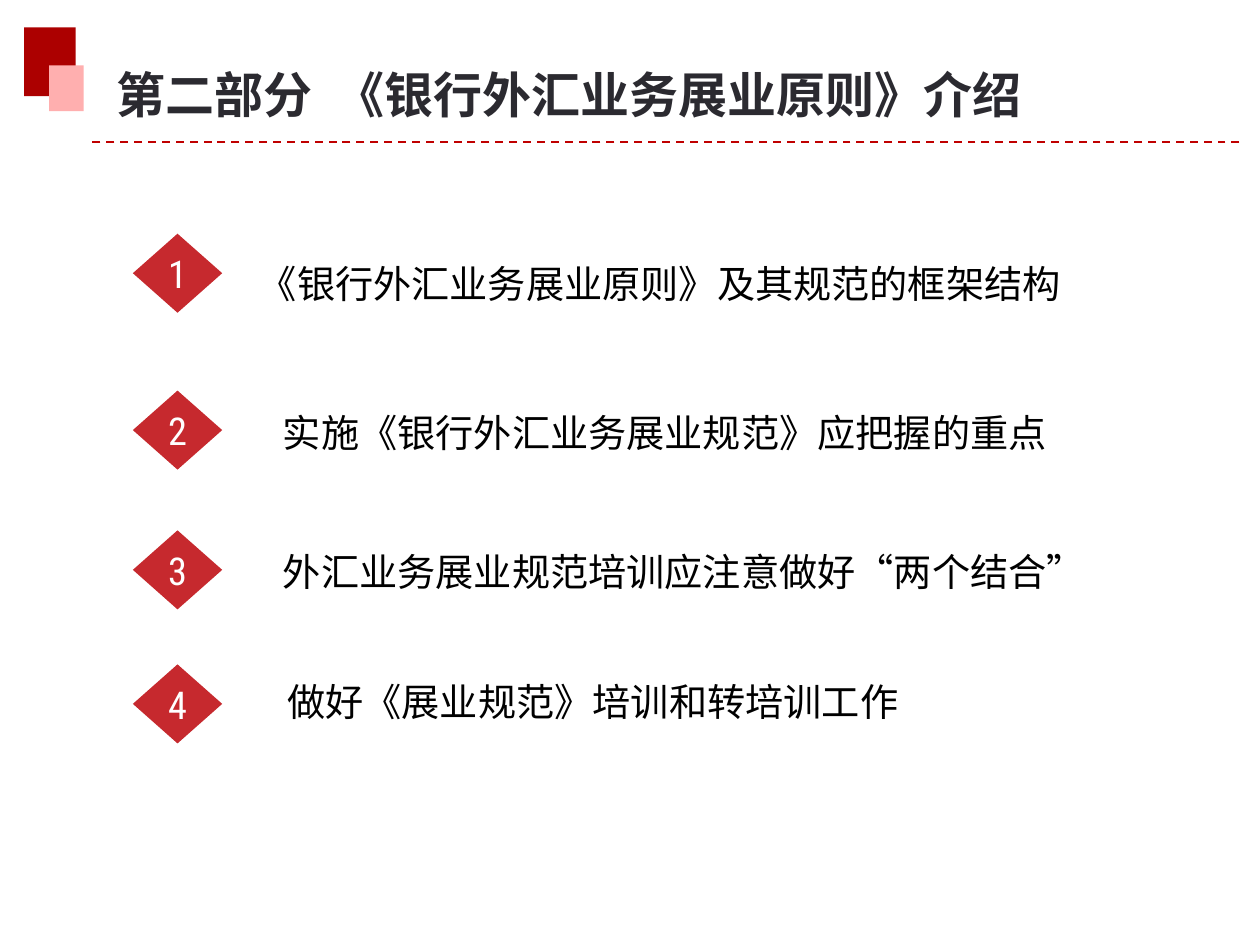
from dataclasses import dataclass

from lxml import etree
from pptx import Presentation
from pptx.dml.color import RGBColor
from pptx.enum.dml import MSO_LINE
from pptx.enum.shapes import MSO_CONNECTOR, MSO_SHAPE
from pptx.enum.text import MSO_ANCHOR, MSO_AUTO_SIZE, PP_ALIGN
from pptx.oxml.ns import qn
from pptx.util import Inches, Pt

RECTANGLE = MSO_SHAPE.RECTANGLE
DIAMOND = MSO_SHAPE.DIAMOND
STRAIGHT = MSO_CONNECTOR.STRAIGHT
DASH = MSO_LINE.DASH
TOP, MIDDLE, BOTTOM = MSO_ANCHOR.TOP, MSO_ANCHOR.MIDDLE, MSO_ANCHOR.BOTTOM
LEFT, CENTER = PP_ALIGN.LEFT, PP_ALIGN.CENTER
FIT_SHAPE = MSO_AUTO_SIZE.SHAPE_TO_FIT_TEXT
NO_FIT = MSO_AUTO_SIZE.NONE


@dataclass(frozen=True)
class Theme:
    dark_red: str = "AC0000"
    pink: str = "FFAFAF"
    rule_red: str = "C00000"
    marker_red: str = "C6292E"
    heading: str = "2B2A30"
    body: str = "000000"
    white: str = "FFFFFF"
    text_font: str = "Noto Sans CJK SC"
    number_font: str = "Roboto Condensed"
    title_size: float = 30.8
    number_size: float = 24.1
    topic_size: float = 24


def write_text(shape, text, *, font, size, color, bold=False, align=LEFT,
               anchor=TOP, insets=(0, 0, 0, 0), wrap=False, fit=NO_FIT):
    frame = shape.text_frame
    frame.word_wrap = wrap
    frame.auto_size = fit
    frame.vertical_anchor = anchor
    (frame.margin_left, frame.margin_top,
     frame.margin_right, frame.margin_bottom) = map(Inches, insets)
    paragraph = frame.paragraphs[0]
    paragraph.alignment = align
    run = paragraph.add_run()
    run.text = text
    run.font.size = Pt(size)
    run.font.bold = bold
    run.font.color.rgb = RGBColor.from_string(color)
    run.font.name = font
    east_asian = etree.SubElement(run.font._element, qn("a:ea"))
    east_asian.set("typeface", font)


class SlideBuilder:
    def __init__(self, slide, theme):
        self.slide = slide
        self.theme = theme

    def title(self, text, left, top, width, height):
        heading = self.slide.shapes.title
        heading.left, heading.top = Inches(left), Inches(top)
        heading.width, heading.height = Inches(width), Inches(height)
        write_text(heading, text, font=self.theme.text_font,
                   size=self.theme.title_size, color=self.theme.heading, bold=True,
                   insets=(0.11, 0.05, 0.11, 0.05), wrap=True, fit=FIT_SHAPE)

    def block(self, kind, color, left, top, width, height):
        block = self.slide.shapes.add_shape(
            kind, Inches(left), Inches(top), Inches(width), Inches(height))
        block.shadow.inherit = False
        block.fill.solid()
        block.fill.fore_color.rgb = RGBColor.from_string(color)
        block.line.fill.background()
        return block

    def rule(self, start, end, y):
        rule = self.slide.shapes.add_connector(
            STRAIGHT, Inches(start), Inches(y), Inches(end), Inches(y))
        rule.line.color.rgb = RGBColor.from_string(self.theme.rule_red)
        rule.line.width = Pt(1.25)
        rule.line.dash_style = DASH
        etree.SubElement(rule._element.spPr, qn("a:effectLst"))

    def marker(self, number, top):
        marker = self.block(DIAMOND, self.theme.marker_red, 1.16, top, 0.78, 0.69)
        write_text(marker, str(number), font=self.theme.number_font,
                   size=self.theme.number_size, color=self.theme.white,
                   align=CENTER, anchor=MIDDLE)

    def topic(self, text, left, top, width, height, **layout):
        topic = self.slide.shapes.add_textbox(
            Inches(left), Inches(top), Inches(width), Inches(height))
        write_text(topic, text, font=self.theme.text_font,
                   size=self.theme.topic_size, color=self.theme.body, **layout)


def main():
    deck = Presentation()
    deck.slide_width, deck.slide_height = Inches(11), Inches(8.25)
    theme = Theme()
    builder = SlideBuilder(deck.slides.add_slide(deck.slide_layouts[5]), theme)

    builder.block(RECTANGLE, theme.dark_red, 0.21, 0.24, 0.45, 0.6)
    builder.block(RECTANGLE, theme.pink, 0.43, 0.57, 0.3, 0.4)
    builder.rule(10.82, 0.77, 1.24)
    builder.title("第二部分  《银行外汇业务展业原则》介绍", 0.91, 0.51, 8.78, 0.63)

    indented = {"anchor": BOTTOM, "insets": (0.32, 0, 0, 0)}
    fitted = {"insets": (0.1, 0.05, 0.1, 0.05), "fit": FIT_SHAPE}
    topics = [
        (2.04, "《银行外汇业务展业原则》及其规范的框架结构", (1.94, 2.11, 4.67, 0.56), indented),
        (3.41, "实施《银行外汇业务展业规范》应把握的重点", (2.15, 3.41, 4.95, 0.56), indented),
        (4.63, "外汇业务展业规范培训应注意做好“两个结合”", (2.15, 4.63, 4.95, 0.56), indented),
        (5.8, "做好《展业规范》培训和转培训工作", (2.41, 5.87, 5.53, 0.5), fitted),
    ]
    for number, (marker_top, text, bounds, layout) in enumerate(topics, start=1):
        builder.marker(number, marker_top)
        builder.topic(text, *bounds, **layout)

    deck.save("out.pptx")


if __name__ == "__main__":
    main()
